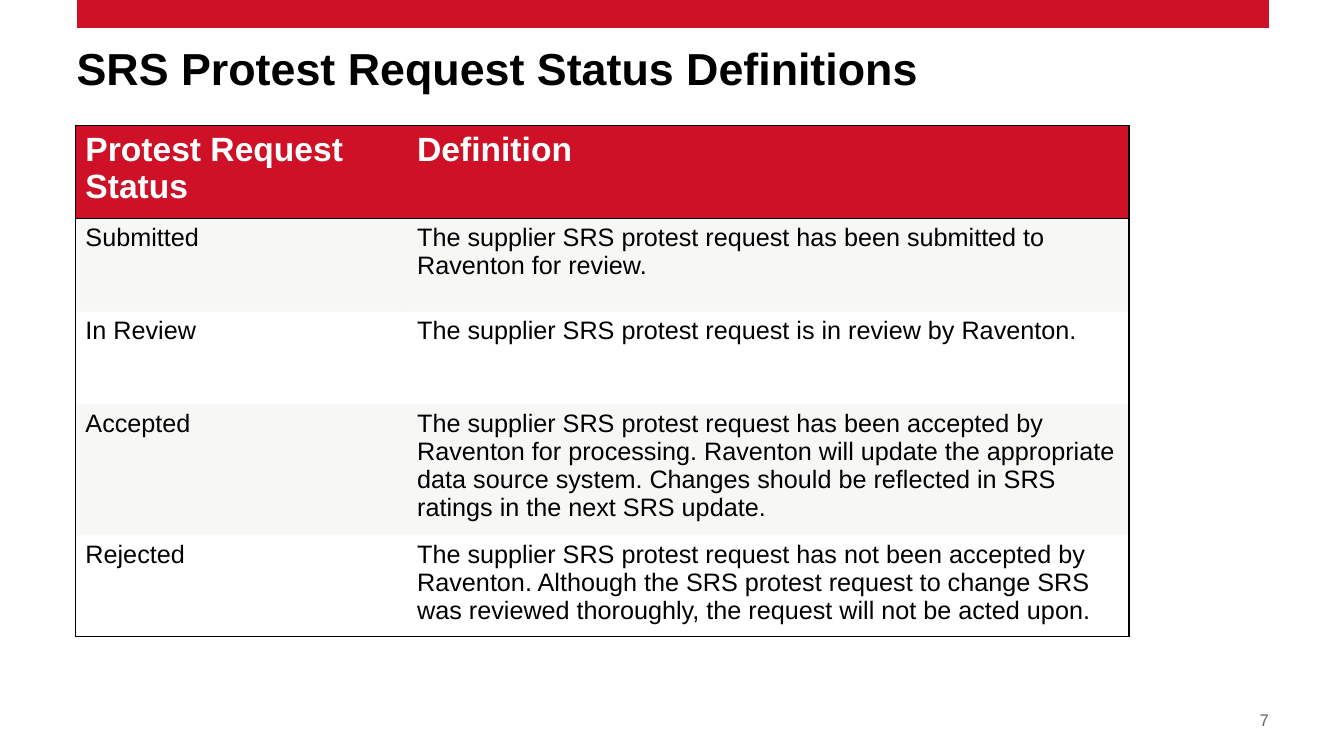
from lxml import etree
from pptx import Presentation
from pptx import util as u
from pptx.dml.color import RGBColor
from pptx.enum import shapes, text
from pptx.oxml.ns import qn

TITLE = "SRS Protest Request Status Definitions"
PAGE_NUMBER = "7"
ROWS = [
    ("Protest Request Status", "Definition"),
    ("Submitted", "The supplier SRS protest request has been submitted to Raventon for review."),
    ("In Review", "The supplier SRS protest request is in review by Raventon."),
    ("Accepted", "The supplier SRS protest request has been accepted by Raventon for processing. "
                 "Raventon will update the appropriate data source system. "
                 "Changes should be reflected in SRS ratings in the next SRS update."),
    ("Rejected", "The supplier SRS protest request has not been accepted by Raventon. "
                 "Although the SRS protest request to change SRS was reviewed thoroughly, "
                 "the request will not be acted upon."),
]
COLORS = {"red": "CE1126", "black": "000000", "white": "FFFFFF", "band": "D9D9D6", "gray": "63666A"}
FONT = "Arial"
LEFT, RIGHT = 1.93, 31.98
COLUMN_WIDTHS = (8.36, 18.19)
ROW_HEIGHTS = (2.34, 2.34, 2.34, 3.1, 2.4)
TABLE_LEFT, TABLE_TOP = 1.9, 3.17


def add_span(para, words, size, color, bold=False):
    span = para.add_run()
    span.text = words
    span.font.name = FONT
    span.font.size = u.Pt(size)
    span.font.bold = bold
    span.font.color.rgb = RGBColor.from_string(COLORS[color])


def add_text_box(page, left, top, width, height):
    """Add a wrapping box without margins and return its first paragraph."""
    box = page.shapes.add_textbox(u.Cm(left), u.Cm(top), u.Cm(width), u.Cm(height))
    frame = box.text_frame
    frame.word_wrap = True
    frame.vertical_anchor = text.MSO_ANCHOR.TOP
    frame.margin_left = frame.margin_right = frame.margin_top = frame.margin_bottom = 0
    return frame.paragraphs[0]


def set_borders(cell, visible):
    """Draw the visible sides in black and hide the others."""
    properties = cell._tc.get_or_add_tcPr()
    for index, side in enumerate(("L", "R", "T", "B")):
        line = etree.Element(qn(f"a:ln{side}"), w=str(u.Pt(1)))
        if side in visible:
            fill = etree.SubElement(line, qn("a:solidFill"))
            etree.SubElement(fill, qn("a:srgbClr"), val=COLORS["black"])
        else:
            etree.SubElement(line, qn("a:noFill"))
        properties.insert(index, line)


def fill_cell(cell, row):
    if row and row % 2 == 0:
        cell.fill.background()
        return
    cell.fill.solid()
    cell.fill.fore_color.rgb = RGBColor.from_string(COLORS["band" if row else "red"])
    if row:
        color = cell._tc.tcPr.find(".//" + qn("a:srgbClr"))
        etree.SubElement(color, qn("a:alpha"), val="20000")


def add_status_table(page):
    frame = page.shapes.add_table(
        len(ROWS), len(COLUMN_WIDTHS), u.Cm(TABLE_LEFT), u.Cm(TABLE_TOP),
        u.Cm(sum(COLUMN_WIDTHS)), u.Cm(sum(ROW_HEIGHTS)))
    table = frame.table
    for column, width in zip(table.columns, COLUMN_WIDTHS):
        column.width = u.Cm(width)
    for row, (height, words) in enumerate(zip(ROW_HEIGHTS, ROWS)):
        table.rows[row].height = u.Cm(height)
        top = "T" if row < 2 else ""
        bottom = "B" if row in (0, len(ROWS) - 1) else ""
        style = (18, "black", False) if row else (24, "white", True)
        for column, side in enumerate("LR"):
            cell = table.cell(row, column)
            fill_cell(cell, row)
            set_borders(cell, side + top + bottom)
            add_span(cell.text_frame.paragraphs[0], words[column], *style)


def main():
    deck = Presentation()
    deck.slide_width, deck.slide_height = u.Cm(33.87), u.Cm(19.05)
    page = deck.slides.add_slide(deck.slide_layouts[6])

    bar = page.shapes.add_connector(
        shapes.MSO_CONNECTOR.STRAIGHT, u.Cm(LEFT), u.Cm(0.36), u.Cm(RIGHT), u.Cm(0.36))
    bar.line.color.rgb = RGBColor.from_string(COLORS["red"])
    bar.line.width = u.Pt(20)
    etree.SubElement(bar._element.spPr, qn("a:effectLst"))

    title = add_text_box(page, LEFT, 1.3, RIGHT - LEFT, 1.88)
    title.line_spacing = 0.8
    add_span(title, TITLE, 32, "black", True)

    number = add_text_box(page, RIGHT - 1.47, 17.88, 1.47, 1.02)
    number.alignment = text.PP_ALIGN.RIGHT
    add_span(number, PAGE_NUMBER, 12, "gray")

    add_status_table(page)
    deck.save("out.pptx")


if __name__ == "__main__":
    main()
